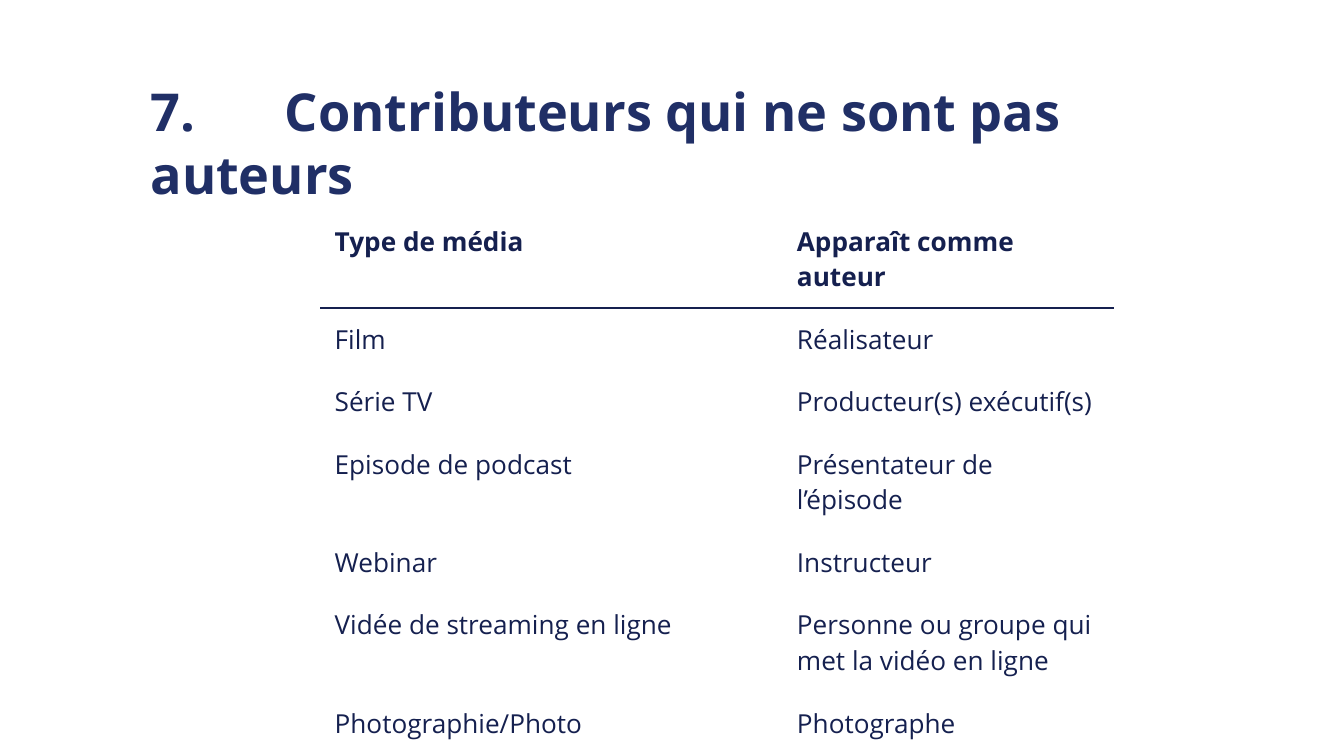
"""Build the slide on contributors who are not authors."""
from dataclasses import dataclass

import pptx
import pptx.dml.color
import pptx.enum.text
import pptx.oxml
import pptx.oxml.ns
import pptx.util
from pptx.util import Inches


@dataclass(frozen=True)
class Theme:
    font: str = "Open Sans"
    title: str = "202F66"
    ink: str = "15204F"
    head: float = 28
    body: float = 14
    rule: float = 1.5
    pad: float = 0.1


@dataclass(frozen=True)
class Entry:
    media: str
    author: str
    bold: bool = False


THEME = Theme()
SPACE = pptx.oxml.ns.nsdecls("a")
ENTRIES = [
    Entry("Type de média", "Apparaît comme auteur", bold=True),
    Entry("Film", "Réalisateur"),
    Entry("Série TV", "Producteur(s) exécutif(s)"),
    Entry("Episode de podcast", "Présentateur de l’épisode"),
    Entry("Webinar", "Instructeur"),
    Entry("Vidée de streaming en ligne", "Personne ou groupe qui met la vidéo en ligne"),
    Entry("Photographie/Photo", "Photographe"),
]


def write(frame, text: str, *, size: float, color: str, bold: bool = False,
          tab: float = 0) -> None:
    para = frame.paragraphs[0]
    para.alignment = pptx.enum.text.PP_ALIGN.LEFT
    para.line_spacing = 1.0
    if tab:
        para._p.get_or_add_pPr().append(pptx.oxml.parse_xml(
            f'<a:tabLst {SPACE}><a:tab pos="{Inches(tab)}" algn="l"/></a:tabLst>'))
    run = para.add_run()
    run.text = text
    run.font.name = THEME.font
    run.font.size = pptx.util.Pt(size)
    run.font.bold = bold
    run.font.color.rgb = pptx.dml.color.RGBColor.from_string(color)


def inset(box) -> None:
    for side in ("left", "top", "right", "bottom"):
        setattr(box, f"margin_{side}", Inches(THEME.pad))


def border(cell, side: str, shown: bool) -> None:
    fill = "<a:noFill/>"
    if shown:
        fill = f'<a:solidFill><a:srgbClr val="{THEME.ink}"/></a:solidFill>'
    cell._tc.get_or_add_tcPr().insert(0, pptx.oxml.parse_xml(
        f'<a:{side} {SPACE} w="{pptx.util.Pt(THEME.rule)}">{fill}</a:{side}>'))


def add_title(slide, text: str) -> None:
    title = slide.shapes.title
    title.left, title.top = Inches(1.02), Inches(0.49)
    title.width, title.height = Inches(7.87), Inches(0.63)
    frame = title.text_frame
    frame.word_wrap = True
    frame.auto_size = pptx.enum.text.MSO_AUTO_SIZE.NONE
    frame.vertical_anchor = pptx.enum.text.MSO_ANCHOR.TOP
    inset(frame)
    write(frame, text, size=THEME.head, color=THEME.title, bold=True, tab=1)


def add_grid(slide, entries: list[Entry]) -> None:
    widths, high = (3.44, 2.45), 0.42
    table = slide.shapes.add_table(
        len(entries), len(widths), Inches(2.39), Inches(1.56),
        Inches(sum(widths)), Inches(high * len(entries))).table
    table.first_row = table.horz_banding = False
    for col, width in zip(table.columns, widths):
        col.width = Inches(width)
    for row, (line, entry) in enumerate(zip(table.rows, entries)):
        line.height = Inches(high)
        for cell, text in zip(line.cells, (entry.media, entry.author)):
            inset(cell)
            cell.fill.background()
            write(cell.text_frame, text, size=THEME.body, color=THEME.ink, bold=entry.bold)
            border(cell, "lnB", row == 0)
            border(cell, "lnT", row == 1)


def main() -> None:
    deck = pptx.Presentation()
    deck.slide_width, deck.slide_height = Inches(10), Inches(10 * 9 / 16)
    slide = deck.slides.add_slide(deck.slide_layouts[5])
    add_title(slide, "7.\tContributeurs qui ne sont pas auteurs")
    add_grid(slide, ENTRIES)
    deck.save("out.pptx")


if __name__ == "__main__":
    main()
